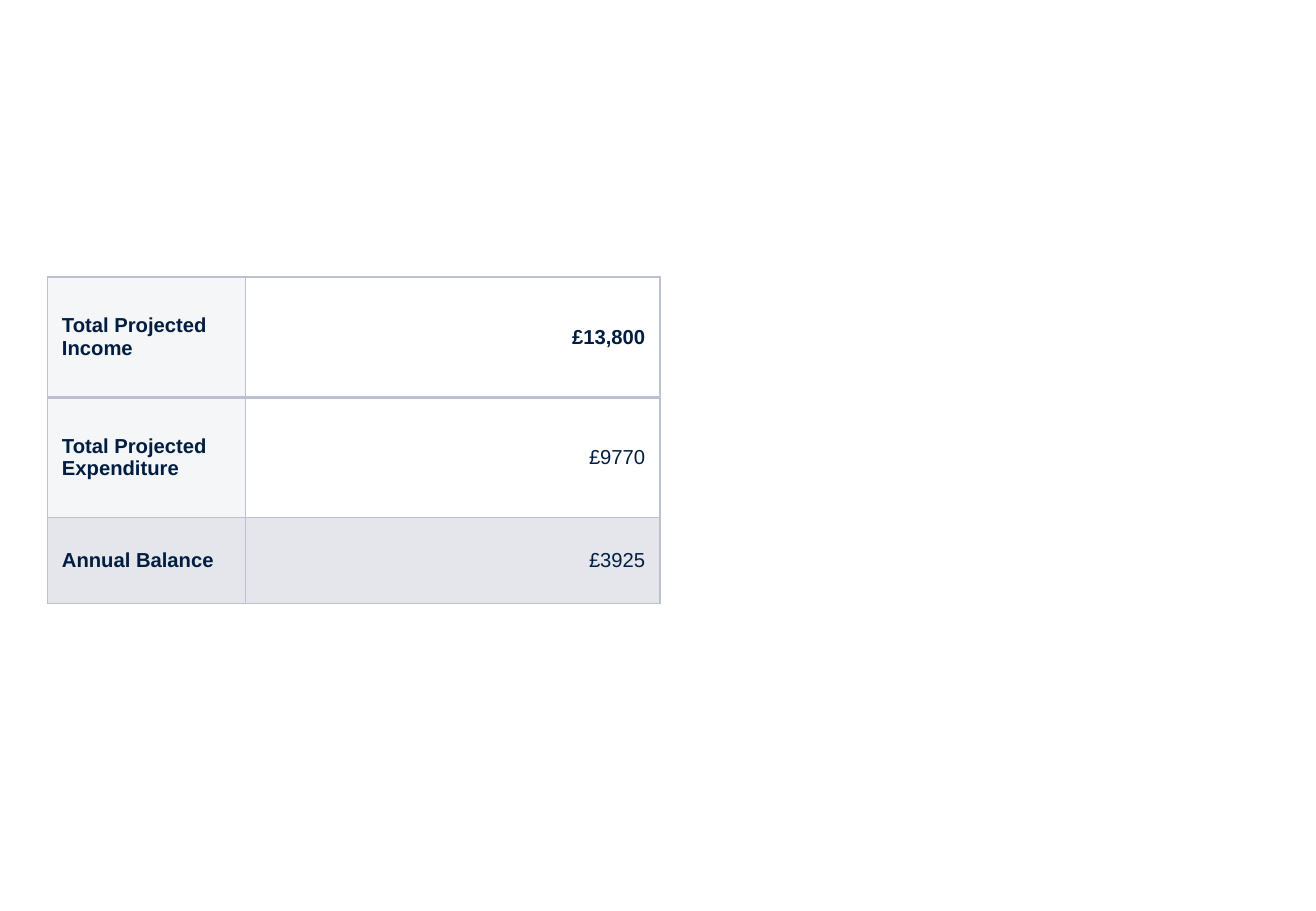
from lxml import etree
from pptx import Presentation
from pptx.dml.color import RGBColor
from pptx.enum.text import MSO_ANCHOR, PP_ALIGN
from pptx.oxml.ns import qn
from pptx.util import Inches, Pt

MIDDLE = MSO_ANCHOR.MIDDLE
LEFT, RIGHT = PP_ALIGN.LEFT, PP_ALIGN.RIGHT
NAVY = RGBColor(0x01, 0x1E, 0x41)
BORDER = RGBColor(0xBB, 0xC1, 0xCE)
LABEL_FILL = RGBColor(0xF1, 0xF3, 0xF5)
WHITE = RGBColor(0xFF, 0xFF, 0xFF)
BALANCE_FILL = RGBColor(0xE4, 0xE6, 0xEB)

COL_WIDTHS = (1.63, 3.41)
BUDGET_ROWS = (
    ("Total Projected Income", "£13,800", 0.99),
    ("Total Projected Expenditure", "£9770", 0.99),
    ("Annual Balance", "£3925", 0.71),
)


class BudgetSlide:
    """Draws budget tables on one slide in a shared style."""

    def __init__(self, s, font="Arial", size=12):
        self.s = s
        self.font = font
        self.size = size

    def borders(self, cell, top, bottom):
        tcPr = cell._tc.get_or_add_tcPr()
        for side, width in (("L", 1), ("R", 1), ("T", top), ("B", bottom)):
            ln = etree.SubElement(tcPr, qn(f"a:ln{side}"), w=str(Pt(width)))
            fill = etree.SubElement(ln, qn("a:solidFill"))
            etree.SubElement(fill, qn("a:srgbClr"), val=str(BORDER))

    def fill(self, cell, color, opacity):
        cell.fill.solid()
        cell.fill.fore_color.rgb = color
        if opacity < 100:
            clr = cell._tc.tcPr.find(".//" + qn("a:solidFill") + "[last()]/" + qn("a:srgbClr"))
            clr = cell._tc.tcPr.find(qn("a:solidFill")).find(qn("a:srgbClr"))
            etree.SubElement(clr, qn("a:alpha"), val=str(opacity * 1000))

    def text(self, cell, text, bold, align):
        cell.vertical_anchor = MIDDLE
        cell.margin_left = cell.margin_right = Inches(0.12)
        cell.margin_top = cell.margin_bottom = Inches(0.06)
        p = cell.text_frame.paragraphs[0]
        p.text = text
        p.alignment = align
        font = p.runs[0].font
        font.name = self.font
        font.size = Pt(self.size)
        font.bold = bold
        font.color.rgb = NAVY

    def table(self, left, top, rows, col_widths):
        height = sum(row[2] for row in rows)
        table = self.s.shapes.add_table(
            len(rows), len(col_widths), Inches(left), Inches(top),
            Inches(sum(col_widths)), Inches(height)).table
        table.first_row = table.horz_banding = False
        for col, width in zip(table.columns, col_widths):
            col.width = Inches(width)
        for i, (label, amount, row_height) in enumerate(rows):
            table.rows[i].height = Inches(row_height)
            last = i == len(rows) - 1
            for j, text in enumerate((label, amount)):
                cell = table.cell(i, j)
                self.borders(cell, 2 if i == 1 else 1, 2 if i == 0 else 1)
                color = BALANCE_FILL if last else (LABEL_FILL, WHITE)[j]
                self.fill(cell, color, 100 if last else 70)
                self.text(cell, text, j == 0 or i == 0, (LEFT, RIGHT)[j])


def main():
    prs = Presentation()
    prs.slide_width, prs.slide_height = Inches(10.83), Inches(7.5)
    s = prs.slides.add_slide(prs.slide_layouts[6])
    BudgetSlide(s).table(0.39, 2.28, BUDGET_ROWS, COL_WIDTHS)
    prs.save("out.pptx")


if __name__ == "__main__":
    main()
